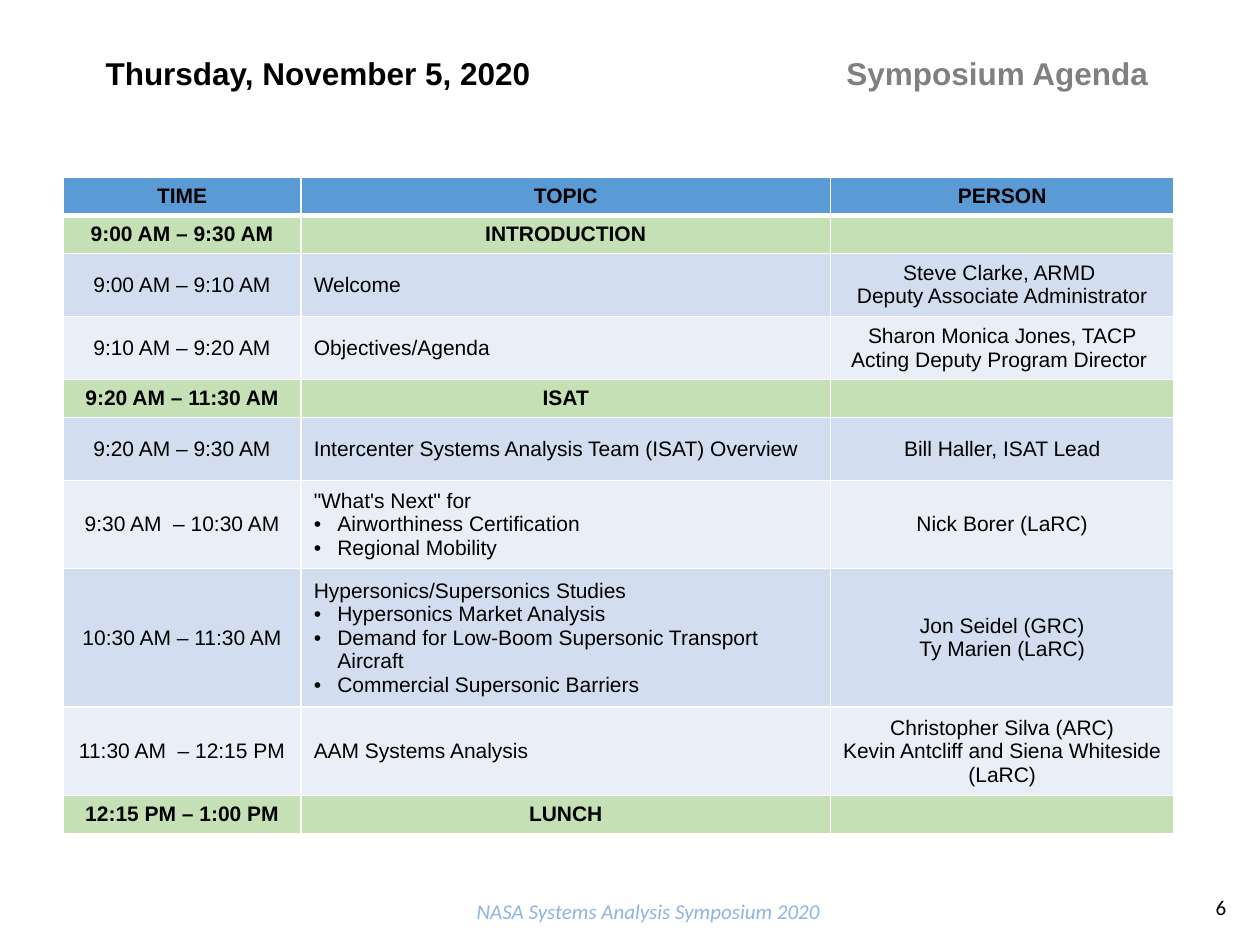
"""Build the Thursday agenda page of the symposium deck."""
from dataclasses import dataclass
from typing import Any

from lxml import etree
from pptx import Presentation
from pptx.dml.color import RGBColor
from pptx.enum.text import MSO_ANCHOR, MSO_AUTO_SIZE, PP_ALIGN
from pptx.oxml.ns import qn
from pptx.util import Pt

LEFT, CENTER, RIGHT = PP_ALIGN.LEFT, PP_ALIGN.CENTER, PP_ALIGN.RIGHT
TOP, MIDDLE = MSO_ANCHOR.TOP, MSO_ANCHOR.MIDDLE
FIT, FIXED = MSO_AUTO_SIZE.SHAPE_TO_FIT_TEXT, MSO_AUTO_SIZE.NONE


@dataclass(frozen=True)
class Theme:
    body_font: str = "Arial"
    footer_font: str = "Calibri"
    title_size: int = 18
    body_size: int = 12
    ink: str = "000000"
    muted: str = "808080"
    footer: str = "8EB4E3"
    rule: str = "FFFFFF"
    header: str = "5B9BD5"
    section: str = "C5E0B4"
    bands: tuple[str, str] = ("D2DEEF", "EAEFF7")


THEME = Theme()


@dataclass(frozen=True)
class Style:
    font: str = THEME.body_font
    size: int = THEME.body_size
    color: str = THEME.ink
    bold: bool = False
    italic: bool = False


@dataclass(frozen=True)
class Label:
    text: str
    left: float
    top: float
    width: float
    style: Style
    align: Any = LEFT
    anchor: Any = MIDDLE
    wrap: bool = True


@dataclass(frozen=True)
class AgendaRow:
    time: str
    topic: str
    person: str = ""
    bullets: tuple[str, ...] = ()
    height: float = 21.6
    fill: str = THEME.section
    heading: bool = False


TITLE = Style(size=THEME.title_size, bold=True)
MUTED_TITLE = Style(size=THEME.title_size, color=THEME.muted, bold=True)
FOOTER = Style(font=THEME.footer_font, color=THEME.footer, italic=True)
NUMBER = Style(font=THEME.footer_font)
LABEL_HEIGHT = 28.8
LABELS = (
    Label("Thursday, November 5, 2020", 53.3, 27.4, 260, TITLE, anchor=TOP, wrap=False),
    Label("NASA Systems Analysis Symposium 2020", 142.6, 506.2, 455.8, FOOTER, CENTER),
    Label("6", 540, 504, 167.8, NUMBER, RIGHT),
    Label("Symposium Agenda", 476.6, 27.4, 193.7, MUTED_TITLE, anchor=TOP, wrap=False),
)

TABLE_LEFT, TABLE_TOP = 36, 101.5
COLUMN_WIDTHS = (136.1, 302.4, 196.5)
BULLET_INDENT = 13.5
THIN, THICK = 1, 3
ODD, EVEN = THEME.bands
AGENDA = (
    AgendaRow("TIME", "TOPIC", "PERSON", fill=THEME.header, heading=True),
    AgendaRow("9:00 AM – 9:30 AM", "INTRODUCTION", heading=True),
    AgendaRow("9:00 AM – 9:10 AM", "Welcome",
              "Steve Clarke, ARMD \nDeputy Associate Administrator", height=36, fill=ODD),
    AgendaRow("9:10 AM – 9:20 AM", "Objectives/Agenda",
              "Sharon Monica Jones, TACP Acting Deputy Program Director ", height=36, fill=EVEN),
    AgendaRow("9:20 AM – 11:30 AM", "ISAT", heading=True),
    AgendaRow("9:20 AM – 9:30 AM", "Intercenter Systems Analysis Team (ISAT) Overview",
              "Bill Haller, ISAT Lead", height=36, fill=ODD),
    AgendaRow("9:30 AM  – 10:30 AM", "\"What's Next\" for", "Nick Borer (LaRC)",
              ("Airworthiness Certification", "Regional Mobility"), 50.4, EVEN),
    AgendaRow("10:30 AM – 11:30 AM", "Hypersonics/Supersonics Studies",
              "Jon Seidel (GRC)\nTy Marien (LaRC)",
              ("Hypersonics Market Analysis",
               "Demand for Low-Boom Supersonic Transport Aircraft",
               "Commercial Supersonic Barriers"), 79.2, ODD),
    AgendaRow("11:30 AM  – 12:15 PM", "AAM Systems Analysis",
              "Christopher Silva (ARC)\nKevin Antcliff and Siena Whiteside (LaRC)",
              height=50.4, fill=EVEN),
    AgendaRow("12:15 PM – 1:00 PM", "LUNCH", heading=True),
)


def set_all(target: Any, values: dict[str, Any]) -> None:
    """Set every named attribute on the target."""
    for name, value in values.items():
        setattr(target, name, value)


def write(para: Any, text: str, style: Style, align: Any) -> None:
    """Write one styled paragraph, sizing it even when it is empty."""
    para.alignment = align
    if not text:
        etree.SubElement(para._p, qn("a:endParaRPr"), sz=str(style.size * 100))
        return
    span = para.add_run()
    span.text = text
    set_all(span.font, {"name": style.font, "size": Pt(style.size),
                        "bold": style.bold, "italic": style.italic})
    span.font.color.rgb = RGBColor.from_string(style.color)


def add_bullet(para: Any) -> None:
    """Give a paragraph a hanging bullet."""
    props = para._p.get_or_add_pPr()
    props.set("marL", str(Pt(BULLET_INDENT)))
    props.set("indent", str(-Pt(BULLET_INDENT)))
    etree.SubElement(props, qn("a:buFont"), typeface=THEME.body_font)
    etree.SubElement(props, qn("a:buChar"), char="•")


def add_label(page: Any, label: Label) -> None:
    """Place one line of free text."""
    box = page.shapes.add_textbox(Pt(label.left), Pt(label.top), Pt(label.width), Pt(LABEL_HEIGHT))
    set_all(box.text_frame, {"word_wrap": label.wrap, "vertical_anchor": label.anchor,
                             "auto_size": FIXED if label.wrap else FIT})
    write(box.text_frame.paragraphs[0], label.text, label.style, label.align)


def add_borders(cell: Any, top: float, bottom: float) -> None:
    """Draw the four rules around a cell."""
    props = cell._tc.get_or_add_tcPr()
    for side, width in {"L": THIN, "R": THIN, "T": top, "B": bottom}.items():
        line = etree.SubElement(props, qn(f"a:ln{side}"), w=str(Pt(width)))
        paint = etree.SubElement(line, qn("a:solidFill"))
        etree.SubElement(paint, qn("a:srgbClr"), val=THEME.rule)


def fill_row(table: Any, index: int, row: AgendaRow) -> None:
    """Write and paint one agenda row."""
    table.rows[index].height = Pt(row.height)
    style = Style(bold=row.heading)
    topic = "\n".join((row.topic, *row.bullets))
    for column, text in enumerate((row.time, topic, row.person)):
        cell = table.cell(index, column)
        cell.vertical_anchor = MIDDLE if index else TOP
        align = LEFT if column == 1 and not row.heading else CENTER
        for number, line in enumerate(text.split("\n")):
            frame = cell.text_frame
            para = frame.add_paragraph() if number else frame.paragraphs[0]
            if number and column == 1:
                add_bullet(para)
            write(para, line, style, align)
        add_borders(cell, THICK if index == 1 else THIN, THIN if index else THICK)
        cell.fill.solid()
        cell.fill.fore_color.rgb = RGBColor.from_string(row.fill)


def add_agenda(page: Any) -> None:
    """Draw the agenda table."""
    height = sum(row.height for row in AGENDA)
    table = page.shapes.add_table(len(AGENDA), len(COLUMN_WIDTHS), Pt(TABLE_LEFT), Pt(TABLE_TOP),
                                  Pt(sum(COLUMN_WIDTHS)), Pt(height)).table
    set_all(table, {"first_row": False, "horz_banding": False})
    for column, width in zip(table.columns, COLUMN_WIDTHS):
        column.width = Pt(width)
    for index, row in enumerate(AGENDA):
        fill_row(table, index, row)


def main() -> None:
    """Build and save the deck."""
    deck = Presentation()
    set_all(deck, {"slide_width": Pt(720), "slide_height": Pt(540)})
    page = deck.slides.add_slide(deck.slide_layouts[6])
    for label in LABELS:
        add_label(page, label)
    add_agenda(page)
    deck.save("out.pptx")


if __name__ == "__main__":
    main()
